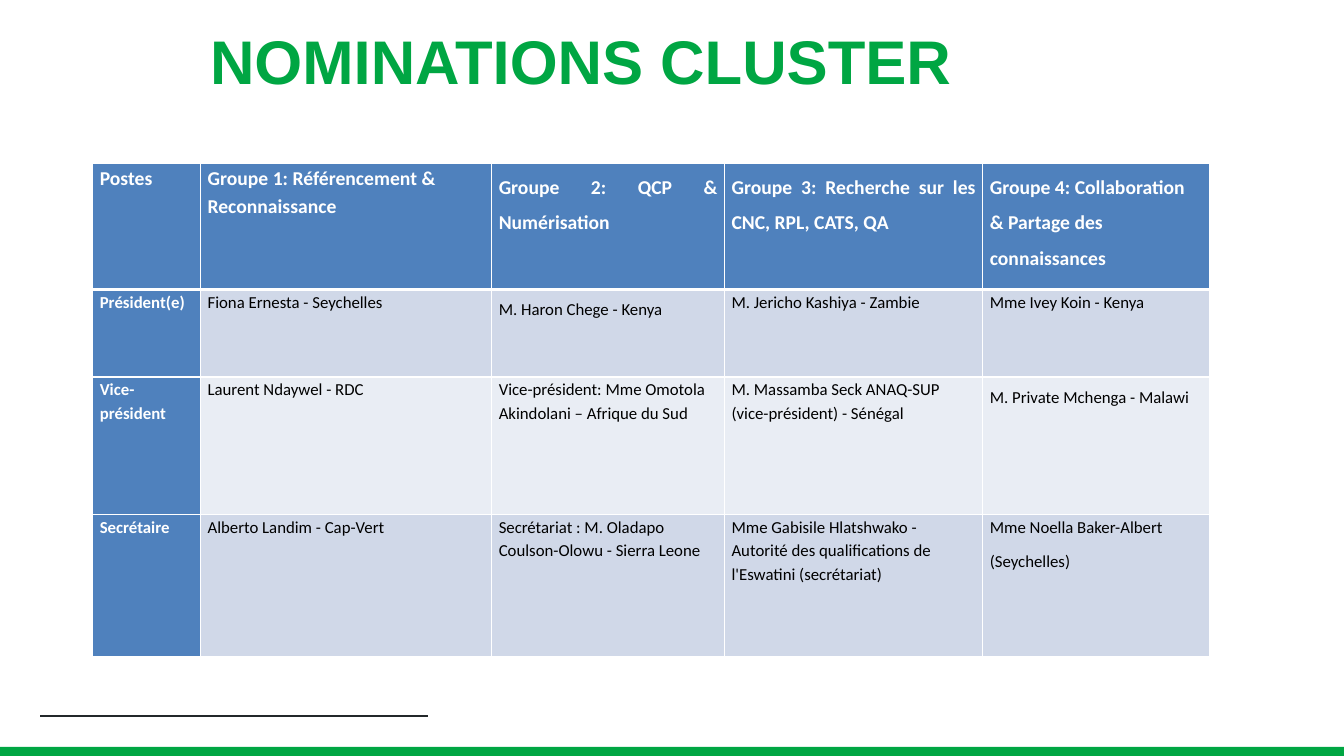
"""Build the cluster nominations slide with its table of posts and groups."""
from lxml.etree import SubElement
from pptx import Presentation
from pptx.dml.color import RGBColor
from pptx.enum.shapes import MSO_CONNECTOR as Connector, MSO_SHAPE as Shape
from pptx.enum.text import MSO_ANCHOR as Anchor, MSO_AUTO_SIZE as AutoSize, PP_ALIGN as Align
from pptx.oxml.ns import qn
from pptx.util import Pt

GREEN, INK, WHITE, BLACK = "00A643", "23282A", "FFFFFF", "000000"
BLUE, BAND_DARK, BAND_LIGHT = "4F81BD", "D0D8E8", "E9EDF4"
COLUMN_WIDTHS = [77, 208, 166.3, 184.5, 162]
ROW_HEIGHTS = [90, 62.5, 98, 101.5]
JUSTIFIED_CELLS = {(0, 2), (0, 3), (1, 2), (2, 4)}
LOOSE_CELLS = JUSTIFIED_CELLS | {(0, 4)}
NOMINATIONS = [
    ["Postes", "Groupe 1: Référencement & Reconnaissance", "Groupe 2: QCP & Numérisation",
     "Groupe 3: Recherche sur les CNC, RPL, CATS, QA",
     "Groupe 4: Collaboration & Partage des connaissances"],
    ["Président(e)", "Fiona Ernesta - Seychelles", "M. Haron Chege - Kenya",
     "M. Jericho Kashiya - Zambie", "Mme Ivey Koin - Kenya"],
    ["Vice-président", "Laurent Ndaywel - RDC",
     "Vice-président: Mme Omotola Akindolani – Afrique du Sud",
     "M. Massamba Seck ANAQ-SUP (vice-président) - Sénégal", "M. Private Mchenga - Malawi"],
    ["Secrétaire", "Alberto Landim - Cap-Vert",
     "Secrétariat : M. Oladapo Coulson-Olowu - Sierra Leone",
     "Mme Gabisile Hlatshwako - Autorité des qualifications de l'Eswatini (secrétariat)",
     "Mme Noella Baker-Albert\n(Seychelles)"],
]


def color(value):
    return RGBColor.from_string(value)


def set_font(font, name, size, value, bold):
    font.name, font.size, font.bold = name, Pt(size), bold
    font.color.rgb = color(value)


def add_footer(slide):
    bar = slide.shapes.add_shape(Shape.RECTANGLE, Pt(0), Pt(533.5), Pt(960), Pt(6.5))
    bar.shadow.inherit = False
    bar.fill.solid()
    bar.fill.fore_color.rgb = color(GREEN)
    bar.line.fill.background()
    rule = slide.shapes.add_connector(
        Connector.STRAIGHT, Pt(28.8), Pt(511.2), Pt(306), Pt(511.2))
    rule.line.width = Pt(1.5)
    rule.line.color.rgb = color(INK)
    SubElement(rule.element.spPr, qn("a:effectLst"))


def set_title(slide, text):
    title = slide.shapes.title
    title.left, title.top, title.width, title.height = Pt(150), Pt(12.2), Pt(786), Pt(66)
    frame = title.text_frame
    frame.text = text
    frame.auto_size = AutoSize.NONE
    frame.vertical_anchor = Anchor.TOP
    frame.margin_left = frame.margin_right = frame.margin_bottom = Pt(0)
    frame.margin_top = Pt(4.3)
    paragraph = frame.paragraphs[0]
    paragraph.alignment = Align.LEFT
    set_font(paragraph.runs[0].font, "Arial", 44, GREEN, True)


def set_borders(cell, top, bottom):
    properties = cell._tc.get_or_add_tcPr()
    for side, width in (("L", 1), ("R", 1), ("T", top), ("B", bottom)):
        line = SubElement(properties, qn(f"a:ln{side}"), w=str(Pt(width)))
        SubElement(SubElement(line, qn("a:solidFill")), qn("a:srgbClr"), val=WHITE)


def format_cell(cell, row, column):
    heading = row == 0 or column == 0
    set_borders(cell, 3 if row == 1 else 1, 3 if row == 0 else 1)
    cell.fill.solid()
    band = BAND_DARK if row % 2 else BAND_LIGHT
    if row == 3:
        band = BAND_DARK
    cell.fill.fore_color.rgb = color(BLUE if heading else band)
    cell.margin_left = cell.margin_right = Pt(5)
    cell.margin_top = cell.margin_bottom = Pt(0)
    for paragraph in cell.text_frame.paragraphs:
        paragraph.alignment = Align.JUSTIFY if (row, column) in JUSTIFIED_CELLS else Align.LEFT
        paragraph.line_spacing = 1.5 if (row, column) in LOOSE_CELLS else 1.15
        paragraph.space_after = Pt(8)
        for run in paragraph.runs:
            set_font(run.font, "Calibri", 14 if row == 0 else 12,
                     WHITE if heading else BLACK, heading)


def add_nominations(slide):
    table = slide.shapes.add_table(
        len(ROW_HEIGHTS), len(COLUMN_WIDTHS), Pt(66.3), Pt(116.8),
        Pt(sum(COLUMN_WIDTHS)), Pt(sum(ROW_HEIGHTS))).table
    for column, width in zip(table.columns, COLUMN_WIDTHS):
        column.width = Pt(width)
    for table_row, height in zip(table.rows, ROW_HEIGHTS):
        table_row.height = Pt(height)
    for row, texts in enumerate(NOMINATIONS):
        for column, text in enumerate(texts):
            cell = table.cell(row, column)
            cell.text_frame.text = text
            format_cell(cell, row, column)


def main():
    presentation = Presentation()
    presentation.slide_width, presentation.slide_height = Pt(960), Pt(540)
    slide = presentation.slides.add_slide(presentation.slide_layouts[5])
    add_footer(slide)
    set_title(slide, "NOMINATIONS CLUSTER")
    add_nominations(slide)
    presentation.save("out.pptx")


if __name__ == "__main__":
    main()
